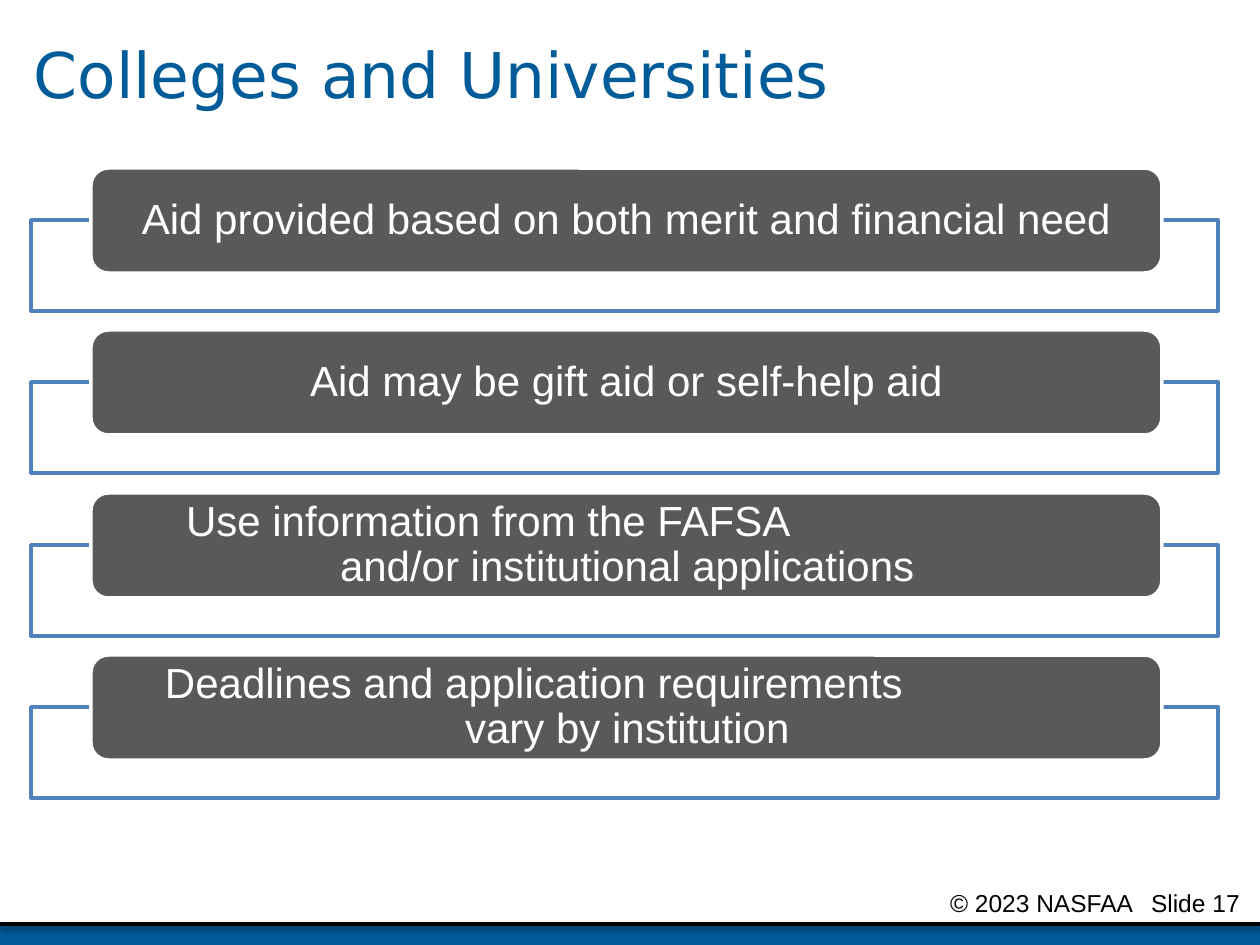
"""Build the 'Colleges and Universities' financial aid slide."""
from lxml.etree import SubElement
from pptx import Presentation
from pptx.dml.color import RGBColor
from pptx.enum.shapes import MSO_CONNECTOR as CONNECTOR, MSO_SHAPE as SHAPE
from pptx.enum.text import MSO_ANCHOR as ANCHOR, MSO_AUTO_SIZE as AUTOSIZE, PP_ALIGN as ALIGN
from pptx.oxml.ns import qn
from pptx.util import Emu, Pt

PX = 914400 / 126
COLORS = {"blue": "005B99", "outline": "4F81BD", "gray": "58595B", "white": "FFFFFF", "black": "000000"}


def px(length):
    return Emu(round(length * PX))


def style(paragraph, color, **formats):
    paragraph.font.color.rgb = RGBColor.from_string(COLORS[color])
    for name, value in formats.items():
        setattr(paragraph.font, name, value)


deck = Presentation()
deck.slide_width, deck.slide_height = px(1260), px(945)
slide = deck.slides.add_slide(deck.slide_layouts[5])
shapes = slide.shapes

heading = shapes.title
heading.left, heading.top, heading.width, heading.height = px(21), px(0), px(1218), px(157)
heading.text_frame.text = "Colleges and Universities"
heading_format = {"vertical_anchor": ANCHOR.MIDDLE, "auto_size": AUTOSIZE.NONE, "word_wrap": True}
for name, value in heading_format.items():
    setattr(heading.text_frame, name, value)
heading_line = heading.text_frame.paragraphs[0]
heading_line.alignment, heading_line.line_spacing = ALIGN.LEFT, 0.9
style(heading_line, "blue", name="DejaVu Sans", size=Pt(36))

footer_band = shapes.add_shape(SHAPE.RECTANGLE, px(0), px(924), px(1260), px(25))
footer_band.shadow.inherit = False
footer_band.fill.solid()
footer_band.fill.fore_color.rgb = RGBColor.from_string(COLORS["blue"])
footer_band.line.fill.background()

footer_rule = shapes.add_connector(CONNECTOR.STRAIGHT, px(0), px(924), px(1260), px(924))
footer_rule.line.color.rgb = RGBColor.from_string(COLORS["black"])
footer_rule.line.width = Pt(2)
effects = SubElement(footer_rule._element.spPr, qn("a:effectLst"))
shadow = SubElement(effects, qn("a:outerShdw"), blurRad=str(Pt(3.1)), dist=str(Pt(1.6)),
                    dir="5400000", rotWithShape="0")
shadow_color = SubElement(shadow, qn("a:srgbClr"), val=COLORS["black"])
SubElement(shadow_color, qn("a:alpha"), val="38000")

copyright_box = shapes.add_textbox(px(787), px(882), px(473), px(32))
copyright_box.text_frame.word_wrap = True
copyright_box.text_frame.margin_left = px(163)
copyright_box.text_frame.margin_right = px(0)
copyright_line = copyright_box.text_frame.paragraphs[0]
copyright_line.text = "© 2023 NASFAA\tSlide 17"
tabs = SubElement(copyright_line._p.get_or_add_pPr(), qn("a:tabLst"))
SubElement(tabs, qn("a:tab"), pos=str(px(201)), algn="l")
style(copyright_line, "black", name="Arial", size=Pt(14))

aid_facts = [
    (["Aid provided based on both merit and financial need"], None),
    (["Aid may be gift aid or self-help aid"], None),
    (["Use information from the FAFSA", "and/or institutional applications"], (58, 212)),
    (["Deadlines and application requirements", "vary by institution"], (37, 337)),
]
bar_format = {"margin_left": px(32), "margin_right": px(32), "margin_top": 0, "margin_bottom": 0,
              "vertical_anchor": ANCHOR.MIDDLE, "word_wrap": True}

for row, (lines, indents) in enumerate(aid_facts):
    top = 168 + row * 325 // 2
    frame = shapes.add_shape(SHAPE.RECTANGLE, px(31), px(top + 52), px(1187), px(91))
    bar = shapes.add_shape(SHAPE.ROUNDED_RECTANGLE, px(91), px(top), px(1071), px(105))
    for part, fill, outline in ((frame, "white", "outline"), (bar, "gray", "white")):
        part.shadow.inherit = False
        part.fill.solid()
        part.fill.fore_color.rgb = RGBColor.from_string(COLORS[fill])
        part.line.color.rgb = RGBColor.from_string(COLORS[outline])
        part.line.width = Pt(2)
    frame_color = frame._element.spPr.find(qn("a:solidFill")).find(qn("a:srgbClr"))
    SubElement(frame_color, qn("a:alpha"), val="90000")

    for name, value in bar_format.items():
        setattr(bar.text_frame, name, value)
    fact = bar.text_frame.paragraphs[0]
    fact.text = "\v".join(lines)
    fact.alignment, fact.line_spacing = ALIGN.CENTER, 0.9
    if indents:
        first, rest = indents
        fact.alignment = ALIGN.LEFT
        fact._p.pPr.set("marL", str(px(rest)))
        fact._p.pPr.set("indent", str(px(first - rest)))
    style(fact, "white", name="Arial", size=Pt(24))

deck.save("out.pptx")
